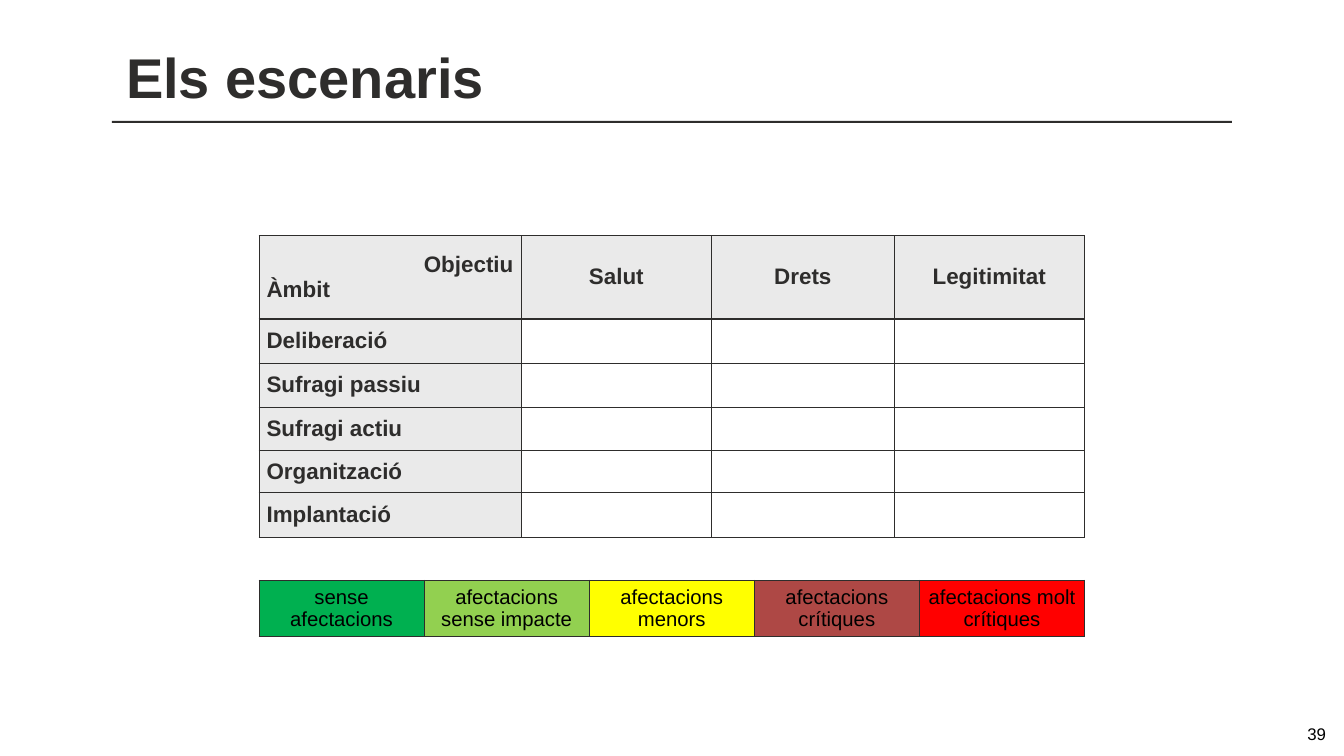
"""Build the scenarios slide: an empty objectives matrix above its severity legend."""
from dataclasses import dataclass

from lxml import etree
from pptx import Presentation
from pptx.dml import color
from pptx.enum import shapes, text
from pptx.oxml import ns
from pptx.util import Pt

LEFT, CENTER = text.PP_ALIGN.LEFT, text.PP_ALIGN.CENTER
RIGHT, JUSTIFY = text.PP_ALIGN.RIGHT, text.PP_ALIGN.JUSTIFY
MIDDLE = text.MSO_ANCHOR.MIDDLE


@dataclass(frozen=True)
class Theme:
    font: str = "Arial"
    ink: str = "2E2D2C"
    black: str = "000000"
    white: str = "FFFFFF"
    header: str = "EAEAEA"
    title_size: float = 80
    matrix_size: float = 32
    legend_size: float = 29
    number_size: float = 24
    thin: float = 1
    thick: float = 3


THEME = Theme()


@dataclass(frozen=True)
class Line:
    words: str
    align: text.PP_ALIGN


@dataclass(frozen=True)
class Entry:
    lines: tuple[Line, ...]
    fill: str


@dataclass(frozen=True)
class Grid:
    left: float
    top: float
    columns: list[float]
    rows: list[float]
    entries: list[list[Entry]]
    size: float
    ink: str
    bold: bool


def rgb(value: str) -> color.RGBColor:
    """Turn a hex string into a colour."""
    return color.RGBColor.from_string(value)


def style(paragraph, align, size: float, ink: str, bold: bool = False) -> None:
    """Set the alignment and font of a paragraph."""
    paragraph.alignment = align
    font = paragraph.font
    font.name, font.size, font.bold = THEME.font, Pt(size), bold
    font.color.rgb = rgb(ink)


def set_insets(frame, across: float, down: float) -> None:
    """Set the inner margins of a text frame or a cell."""
    frame.margin_left = frame.margin_right = Pt(across)
    frame.margin_top = frame.margin_bottom = Pt(down)


def set_borders(cell, top: float, bottom: float) -> None:
    """Outline a cell with thin sides and the given top and bottom widths."""
    properties = cell._tc.get_or_add_tcPr()
    widths = {"lnL": THEME.thin, "lnR": THEME.thin, "lnT": top, "lnB": bottom}
    for side, width in widths.items():
        border = etree.SubElement(properties, ns.qn(f"a:{side}"), w=str(Pt(width)))
        solid = etree.SubElement(border, ns.qn("a:solidFill"))
        etree.SubElement(solid, ns.qn("a:srgbClr"), val=THEME.ink)


def draw_grid(slide, grid: Grid) -> None:
    """Draw a table whose first row has a thick lower edge."""
    table = slide.shapes.add_table(
        len(grid.rows), len(grid.columns), Pt(grid.left), Pt(grid.top),
        Pt(sum(grid.columns)), Pt(sum(grid.rows))).table
    table.first_row = table.horz_banding = False
    for column, width in zip(table.columns, grid.columns):
        column.width = Pt(width)
    for index, (row, height, entries) in enumerate(zip(table.rows, grid.rows, grid.entries)):
        row.height = Pt(height)
        for cell, entry in zip(row.cells, entries):
            set_borders(cell, THEME.thick if index == 1 else THEME.thin,
                        THEME.thick if index == 0 else THEME.thin)
            cell.fill.solid()
            cell.fill.fore_color.rgb = rgb(entry.fill)
            cell.vertical_anchor = MIDDLE
            set_insets(cell, 10.8, 0)
            cell.text_frame.text = "\n".join(line.words for line in entry.lines)
            for paragraph, line in zip(cell.text_frame.paragraphs, entry.lines):
                style(paragraph, line.align, grid.size, grid.ink, grid.bold)


def draw_heading(slide) -> None:
    """Write the title and the rule below it."""
    rule = slide.shapes.add_shape(
        shapes.MSO_SHAPE.RECTANGLE, Pt(160), Pt(172.8), Pt(1600), Pt(2.9))
    rule.shadow.inherit = False
    rule.fill.solid()
    rule.fill.fore_color.rgb = rgb(THEME.ink)
    rule.line.fill.background()

    title = slide.shapes.title
    title.left, title.top, title.width, title.height = Pt(160.6), Pt(52.6), Pt(1600), Pt(113)
    frame = title.text_frame
    frame.text = "Els escenaris"
    frame.word_wrap = True
    frame.auto_size = text.MSO_AUTO_SIZE.NONE
    frame.vertical_anchor = text.MSO_ANCHOR.BOTTOM
    set_insets(frame, 19.4, 9.4)
    style(frame.paragraphs[0], LEFT, THEME.title_size, THEME.ink, bold=True)


def draw_page_number(slide) -> None:
    """Write the page number in the lower right corner."""
    frame = slide.shapes.add_textbox(Pt(1685.5), Pt(1033.2), Pt(216), Pt(28.8)).text_frame
    frame.text = "39"
    frame.word_wrap = True
    frame.vertical_anchor = MIDDLE
    set_insets(frame, 7.2, 7.2)
    style(frame.paragraphs[0], RIGHT, THEME.number_size, THEME.black)


def matrix() -> Grid:
    """Describe the matrix of areas against objectives."""
    objectives = ["Salut", "Drets", "Legitimitat"]
    areas = ["Deliberació", "Sufragi passiu", "Sufragi actiu", "Organització", "Implantació"]
    corner = Entry((Line("Objectiu", RIGHT), Line("Àmbit", JUSTIFY)), THEME.header)
    head = [corner] + [Entry((Line(name, CENTER),), THEME.header) for name in objectives]
    blanks = [Entry((), THEME.white)] * len(objectives)
    body = [[Entry((Line(name, JUSTIFY),), THEME.header)] + blanks for name in areas]
    return Grid(370, 336.4, [374.4, 272.2, 260.6, 272.2],
                [118.8, 64.1, 61.9, 62.6, 59, 64.8], [head] + body,
                THEME.matrix_size, THEME.ink, True)


def legend() -> Grid:
    """Describe the severity scale, as wide as the matrix."""
    levels = {
        "sense afectacions": "00B050",
        "afectacions sense impacte": "92D050",
        "afectacions menors": "FFFF00",
        "afectacions crítiques": "AE4845",
        "afectacions molt crítiques": "FF0000",
    }
    entries = [Entry((Line(name, CENTER),), fill) for name, fill in levels.items()]
    return Grid(370, 828.7, [sum(matrix().columns) / len(levels)] * len(levels), [80.6],
                [entries], THEME.legend_size, THEME.black, False)


def main() -> None:
    """Assemble and save the slide."""
    deck = Presentation()
    deck.slide_width, deck.slide_height = Pt(1920), Pt(1080)
    slide = deck.slides.add_slide(deck.slide_layouts[5])
    draw_heading(slide)
    draw_page_number(slide)
    for grid in (matrix(), legend()):
        draw_grid(slide, grid)
    deck.save("out.pptx")


if __name__ == "__main__":
    main()
